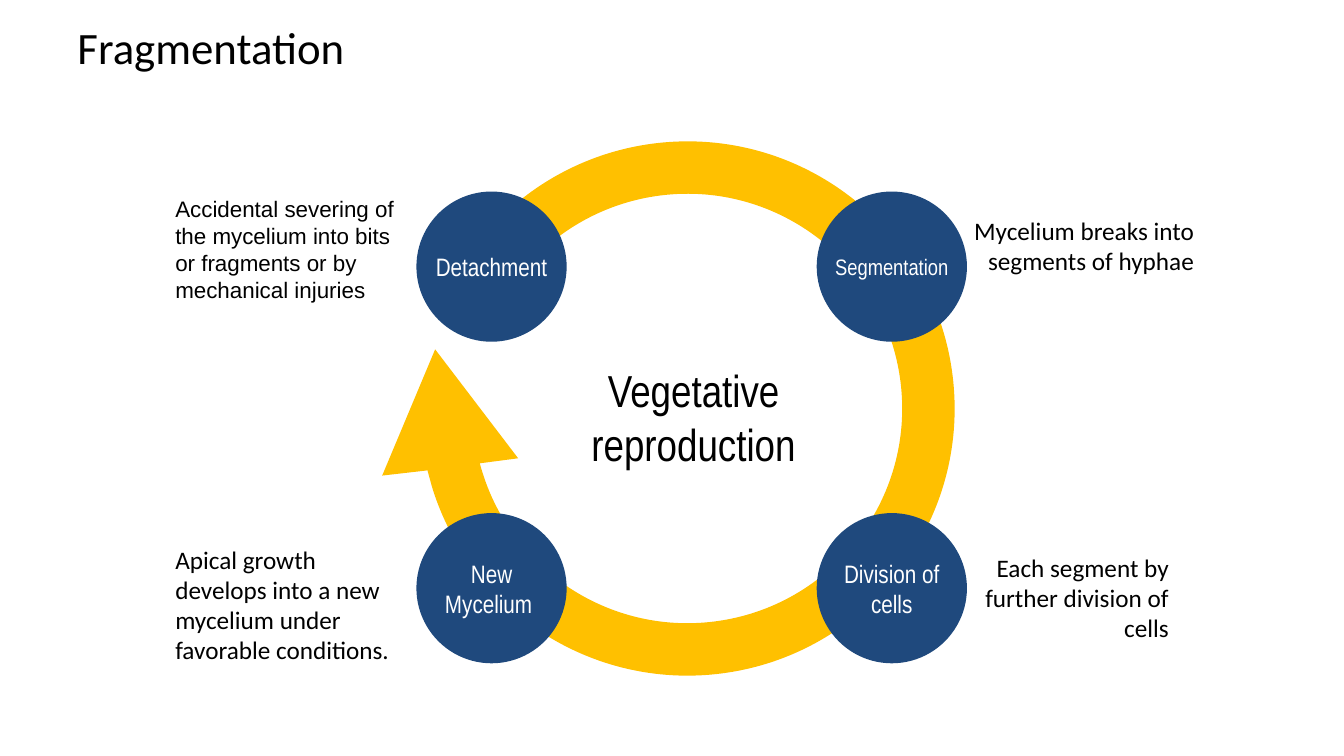
from math import cos, radians, sin, tan

from lxml import etree
from pptx import Presentation
from pptx.dml.color import RGBColor
from pptx.enum.shapes import MSO_SHAPE
from pptx.enum.text import MSO_ANCHOR, PP_ALIGN
from pptx.oxml.ns import qn
from pptx.util import Inches, Pt

OVAL = MSO_SHAPE.OVAL
MIDDLE = MSO_ANCHOR.MIDDLE
LEFT, CENTER, RIGHT = PP_ALIGN.LEFT, PP_ALIGN.CENTER, PP_ALIGN.RIGHT
COLORS = {"ring": "FFC000", "stage": "1F497D", "light": "FFFFFF", "dark": "000000"}

# Ring outline: arc stops in degrees, corners as (angle, radius)
RING_WIDTH = 0.52
OUTER_STOPS = [215.7, 270, 360, 450, 530]
INNER_STOPS = [530.7, 450, 360, 270, 209.9]
HEAD = [(173.7, 2.65), (174.7, 3.1), (200.3, 2.57), (170.7, 1.75), (172.3, 2.13)]
TAIL = [(205.3, 2.13), (219.6, 2.37), (210.4, 2.65)]

STAGE_SIZE = 1.49
LABEL_INSET = 0.06
# Stage name, column, row, font size, label height
STAGES = [
    ("Detachment", 0, 0, 18, 0.4),
    ("Segmentation", 1, 0, 16, 0.37),
    ("New Mycelium ", 0, 1, 18, 0.71),
    ("Division of cells", 1, 1, 18, 0.71),
]
# Note, box, alignment, font, font size
NOTES = [
    ("Accidental severing of the mycelium into bits or fragments or by mechanical injuries",
     (1.64, 1.88, 2.42, 1.18), LEFT, "Arial", 16),
    ("Apical growth develops into a new mycelium under favorable conditions.",
     (1.64, 5.34, 2.42, 1.31), LEFT, "Calibri", 18),
    ("Mycelium breaks into segments of hyphae",
     (9.52, 2.08, 2.42, 0.71), RIGHT, "Calibri", 18),
    ("Each segment by further division of cells",
     (9.27, 5.42, 2.42, 1.01), RIGHT, "Calibri", 18),
]


def add_text(slide, text, box, size=18, font="Calibri", color="dark", align=LEFT):
    sp = slide.shapes.add_textbox(*map(Inches, box))
    tf = sp.text_frame
    tf.word_wrap = True
    tf.vertical_anchor = MIDDLE
    p = tf.paragraphs[0]
    p.alignment = align
    r = p.add_run()
    r.text = text
    r.font.size = Pt(size)
    r.font.name = font
    r.font.color.rgb = RGBColor.from_string(COLORS[color])


def paint(sp, color):
    sp.shadow.inherit = False
    sp.fill.solid()
    sp.fill.fore_color.rgb = RGBColor.from_string(COLORS[color])
    sp.line.fill.background()


def polar(angle, radius):
    return radius * cos(radians(angle)), radius * sin(radians(angle))


def arc(radius, stops):
    """Start point, then two control points and an end point for each curve."""
    points = [polar(stops[0], radius)]
    for a, b in zip(stops, stops[1:]):
        pull = 4 / 3 * tan(radians(b - a) / 4)
        (x0, y0), (x1, y1) = polar(a, radius), polar(b, radius)
        points += [(x0 - pull * y0, y0 + pull * x0),
                   (x1 + pull * y1, y1 - pull * x1), (x1, y1)]
    return points


def bend(lines):
    """Turn each three line segments into one Bezier curve."""
    for i in range(0, len(lines), 3):
        curve = etree.Element(qn("a:cubicBezTo"))
        lines[i].addprevious(curve)
        for line in lines[i:i + 3]:
            curve.append(line[0])
            line.getparent().remove(line)


def add_ring(slide, box):
    """Circular arrow whose head points up at the left of the box."""
    left, top, width, height = box
    radius = height / 2
    cx, cy = left + width - radius, top + radius
    outer = arc(radius, OUTER_STOPS)
    inner = arc(radius - RING_WIDTH, INNER_STOPS)
    head = [polar(*corner) for corner in HEAD]
    tail = [polar(*corner) for corner in TAIL]
    points = [(Inches(cx + x), Inches(cy + y)) for x, y in outer + head + inner + tail]
    builder = slide.shapes.build_freeform(*points[0])
    builder.add_line_segments(points[1:], close=True)
    sp = builder.convert_to_shape()
    lines = list(sp._element.iter(qn("a:lnTo")))
    inner_start = len(outer) + len(head)
    bend(lines[:len(outer) - 1])
    bend(lines[inner_start:inner_start + len(inner) - 1])
    sp.rotation = 352.9
    paint(sp, "ring")


def add_stages(slide, box):
    """Four labelled circles in the corners of the box."""
    left, top, width, height = box
    for name, col, row, size, label_height in STAGES:
        x = left + col * (width - STAGE_SIZE)
        y = top + row * (height - STAGE_SIZE)
        sp = slide.shapes.add_shape(OVAL, *map(Inches, (x, y, STAGE_SIZE, STAGE_SIZE)))
        paint(sp, "stage")
        label = (x + LABEL_INSET, y + (STAGE_SIZE - label_height) / 2,
                 STAGE_SIZE - 2 * LABEL_INSET, label_height)
        add_text(slide, name, label, size=size, font="Arial Narrow",
                 color="light", align=CENTER)


def add_cycle(slide, box):
    """Ring, stages and central caption."""
    left, top, width, height = box
    add_ring(slide, box)
    add_stages(slide, (left + 0.39, top + 0.47, width - 0.27, height - 0.62))
    add_text(slide, "Vegetative reproduction", (left + 1.93, top + 2.11, 2.42, 1.18),
             size=32, font="Arial Narrow", align=CENTER)


def main():
    prs = Presentation()
    prs.slide_width, prs.slide_height = Inches(13.33), Inches(7.5)
    slide = prs.slides.add_slide(prs.slide_layouts[6])

    # Cycle diagram
    add_cycle(slide, (3.74, 1.43, 5.73, 5.3))

    # Notes beside the stages
    for text, box, align, font, size in NOTES:
        add_text(slide, text, box, size=size, font=font, align=align)

    # Title
    add_text(slide, "Fragmentation", (0.67, 0.07, 12, 0.78), size=32)
    prs.save("out.pptx")


if __name__ == "__main__":
    main()
